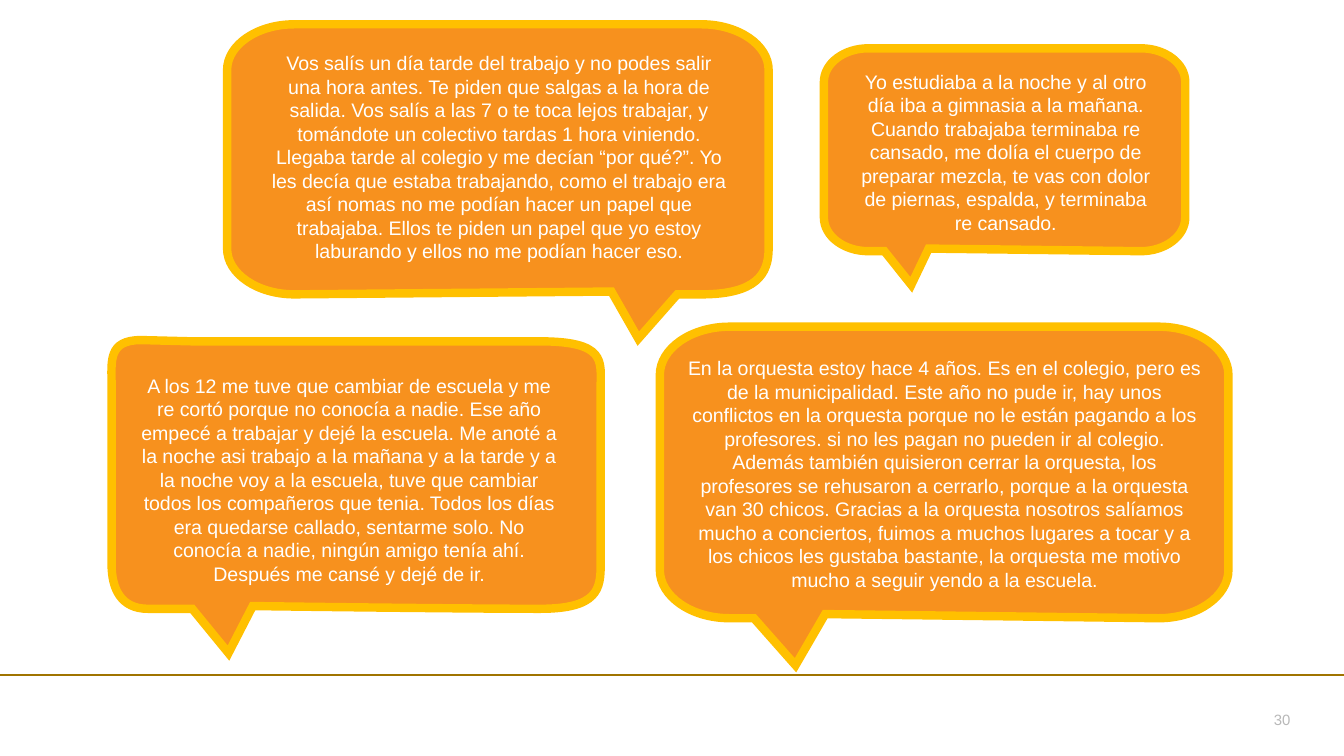
from dataclasses import dataclass

import lxml.etree
import pptx
import pptx.dml.color
import pptx.enum.shapes
import pptx.enum.text
import pptx.oxml.ns
import pptx.util

ORANGE = "F7911E"
GOLD = "FFC000"
WHITE = "FFFFFF"
CURVE = 0.55

Point = tuple[float, float]
Step = tuple[Point, ...]


@dataclass(frozen=True)
class Label:
    left: float
    top: float
    width: float
    height: float
    text: str
    size: float = 10.5
    color: str = WHITE
    align: pptx.enum.text.PP_ALIGN = pptx.enum.text.PP_ALIGN.CENTER


@dataclass(frozen=True)
class Bubble:
    start: Point
    steps: list[Step]
    label: Label


def rgb(value: str) -> pptx.dml.color.RGBColor:
    return pptx.dml.color.RGBColor.from_string(value)


def rounded_bubble(left: float, top: float, right: float, bottom: float,
                   radius_x: float, radius_y: float, tail: Step, label: Label,
                   last_curve: float = CURVE) -> Bubble:
    def corner(x: float, y: float, way_x: int, way_y: int,
               from_side: bool, curve: float = CURVE) -> Step:
        side = (x, y + way_y * radius_y * (1 - CURVE))
        edge = (x + way_x * radius_x * (1 - curve), y)
        if from_side:
            return side, edge, (x + way_x * radius_x, y)
        return edge, side, (x, y + way_y * radius_y)

    steps = [
        corner(left, top, 1, 1, True),
        ((right - radius_x, top),),
        corner(right, top, -1, 1, False),
        ((right, bottom - radius_y),),
        corner(right, bottom, -1, -1, True, last_curve),
        *((point,) for point in tail),
        ((left + radius_x, bottom),),
        corner(left, bottom, 1, -1, False),
    ]
    return Bubble((left, top + radius_y), steps, label)


def draw_bubble(page, bubble: Bubble) -> None:
    def scaled(point: Point) -> Point:
        return pptx.util.Pt(point[0]), pptx.util.Pt(point[1])

    builder = page.shapes.build_freeform(*scaled(bubble.start))
    points = [scaled(point) for step in bubble.steps for point in step]
    builder.add_line_segments(points, close=True)
    shape = builder.convert_to_shape()
    shape.shadow.inherit = False
    shape.fill.solid()
    shape.fill.fore_color.rgb = rgb(ORANGE)
    shape.line.color.rgb = rgb(GOLD)
    shape.line.width = pptx.util.Pt(4.5)
    line = shape.line._get_or_add_ln()
    lxml.etree.SubElement(line, pptx.oxml.ns.qn("a:miter"), lim="800000")

    segments = iter(shape._element.xpath(".//a:path/a:lnTo"))
    for step in bubble.steps:
        group = [next(segments) for _ in step]
        if len(group) == 3:
            curve = lxml.etree.Element(pptx.oxml.ns.qn("a:cubicBezTo"))
            group[0].addprevious(curve)
            for segment in group:
                curve.append(segment[0])
                segment.getparent().remove(segment)


def draw_label(page, label: Label) -> None:
    place = (label.left, label.top, label.width, label.height)
    box = page.shapes.add_textbox(*map(pptx.util.Pt, place))
    box.text_frame.word_wrap = True
    para = box.text_frame.paragraphs[0]
    para.text = label.text
    para.alignment = label.align
    para.font.name = "Arial"
    para.font.size = pptx.util.Pt(label.size)
    para.font.color.rgb = rgb(label.color)


def draw_rule(page, y: float, width: float, color: str) -> None:
    rule = page.shapes.add_connector(
        pptx.enum.shapes.MSO_CONNECTOR.STRAIGHT,
        pptx.util.Pt(0), pptx.util.Pt(y), pptx.util.Pt(width), pptx.util.Pt(y))
    rule.line.color.rgb = rgb(color)
    rule.line.width = pptx.util.Pt(1.5)
    lxml.etree.SubElement(rule._element.spPr, pptx.oxml.ns.qn("a:effectLst"))


ORCHESTRA = Label(
    360.7, 187.2, 290.9, 134.6,
    "En la orquesta estoy hace 4 años. Es en el colegio, pero es de la municipalidad. "
    "Este año no pude ir, hay unos conflictos en la orquesta porque no le están pagando "
    "a los profesores. si no les pagan no pueden ir al colegio. Además también quisieron "
    "cerrar la orquesta, los profesores se rehusaron a cerrarlo, porque a la orquesta van "
    "30 chicos. Gracias a la orquesta nosotros salíamos mucho a conciertos, fuimos a muchos "
    "lugares a tocar y a los chicos les gustaba bastante, la orquesta me motivo mucho a "
    "seguir yendo a la escuela.")
WORK = Label(
    136.8, 23.8, 261.4, 121.7,
    "Vos salís un día tarde del trabajo y no podes salir una hora antes. Te piden que "
    "salgas a la hora de salida. Vos salís a las 7 o te toca lejos trabajar, y tomándote "
    "un colectivo tardas 1 hora viniendo. Llegaba tarde al colegio y me decían “por qué?”. "
    "Yo les decía que estaba trabajando, como el trabajo era así nomas no me podían hacer "
    "un papel que trabajaba. Ellos te piden un papel que yo estoy laburando y ellos no me "
    "podían hacer eso.")
SCHOOL_CHANGE = Label(
    68.4, 196.6, 237.6, 121.7,
    "A los 12 me tuve que cambiar de escuela y me re cortó porque no conocía a nadie. Ese "
    "año empecé a trabajar y dejé la escuela. Me anoté a la noche asi trabajo a la mañana "
    "y a la tarde y a la noche voy a la escuela, tuve que cambiar todos los compañeros que "
    "tenia. Todos los días era quedarse callado, sentarme solo. No conocía a nadie, ningún "
    "amigo tenía ahí. Después me cansé y dejé de ir.")
NIGHT_STUDY = Label(
    450, 33.8, 177.8, 96.5,
    "Yo estudiaba a la noche y al otro día iba a gimnasia a la mañana. Cuando trabajaba "
    "terminaba re cansado, me dolía el cuerpo de preparar mezcla, te vas con dolor de "
    "piernas, espalda, y terminaba re cansado.")
PAGE_NUMBER = Label(640.8, 377.3, 57.6, 11.5, "30", 8, "B8B8B8",
                    pptx.enum.text.PP_ALIGN.RIGHT)

BUBBLES = [
    rounded_bubble(353.5, 175, 658.1, 331.2, 37.4, 25.9,
                   ((442.1, 329), (426.2, 356.4), (403.9, 331.2)), ORCHESTRA),
    rounded_bubble(121.7, 13, 411.8, 157.7, 36, 24.5,
                   ((362.9, 157.7), (342, 181.4), (327.6, 156.2)), WORK, 0.82),
    Bubble((59.8, 206.6), [
        ((59.8, 193.7), (57.6, 182.2), (75.6, 182.2)),
        ((103, 182.9),),
        ((289.4, 182.9),),
        ((324.7, 182.9), (321.8, 193.7), (321.8, 206.6)),
        ((321.8, 302.4),),
        ((321.8, 315.4), (320.4, 326.2), (289.4, 326.2)),
        ((258.5, 326.2), (186.5, 325.4), (135.4, 324.7)),
        ((122.4, 349.9),),
        ((103, 326.2),),
        ((79.2, 326.2),),
        ((64.8, 326.2), (59.8, 315.4), (59.8, 302.4)),
    ], SCHOOL_CHANGE),
    rounded_bubble(441.4, 25.9, 635, 134.6, 23.8, 18,
                   ((497.5, 133.2), (488.2, 152.6), (473.8, 134.6)), NIGHT_STUDY),
]


def main() -> None:
    deck = pptx.Presentation()
    deck.slide_width = pptx.util.Pt(720)
    deck.slide_height = pptx.util.Pt(405)
    page = deck.slides.add_slide(deck.slide_layouts[6])
    draw_rule(page, 361.6, 720, "A07400")
    for bubble in BUBBLES:
        draw_bubble(page, bubble)
        draw_label(page, bubble.label)
    draw_label(page, PAGE_NUMBER)
    deck.save("out.pptx")


if __name__ == "__main__":
    main()
